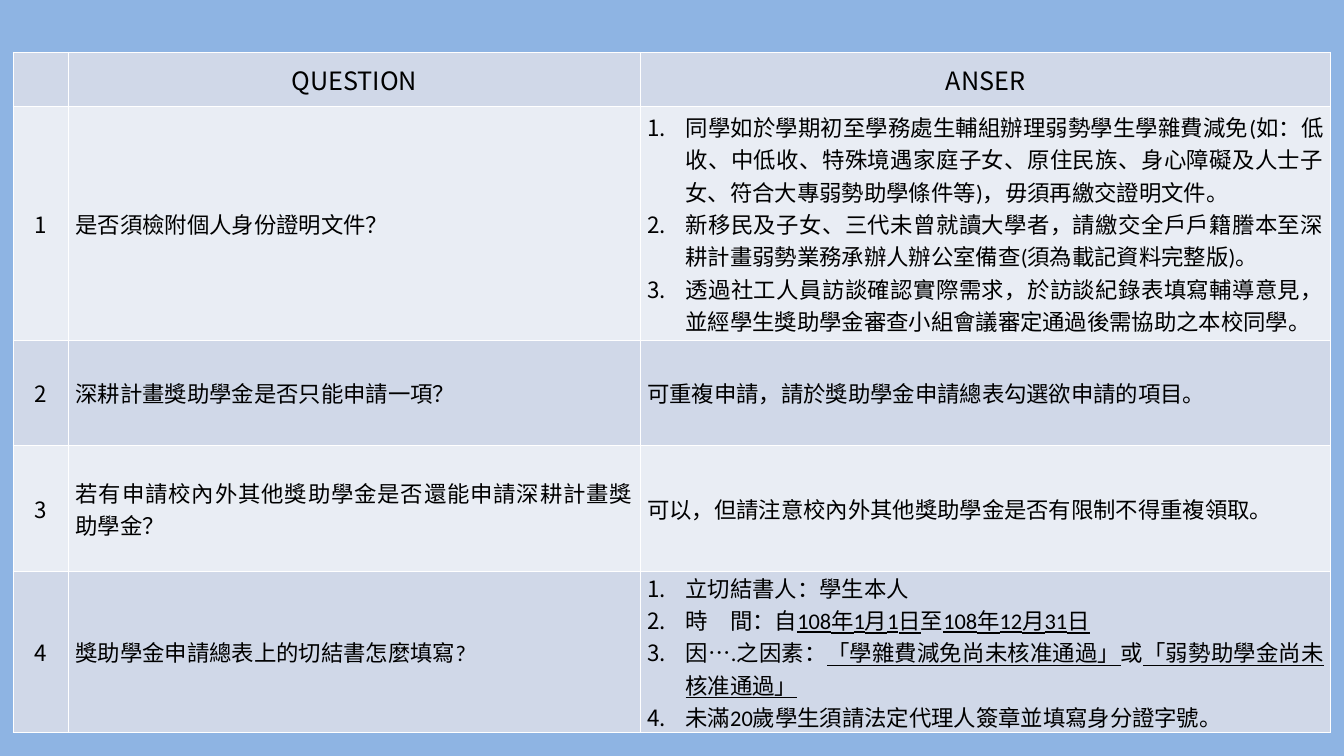
"""Build the question and answer slide on student grants."""
from dataclasses import dataclass

from lxml import etree
from pptx import Presentation
from pptx.dml.color import RGBColor
from pptx.enum.text import MSO_ANCHOR, PP_ALIGN
from pptx.oxml.ns import qn
from pptx.util import Inches, Pt

CENTER, JUSTIFY = PP_ALIGN.CENTER, PP_ALIGN.JUSTIFY
MIDDLE = MSO_ANCHOR.MIDDLE


@dataclass(frozen=True)
class Theme:
    back: str = "8EB4E3"
    dark: str = "D0D8E8"
    light: str = "E9EDF4"
    line: str = "FFFFFF"
    ink: str = "000000"
    sans: str = "Noto Sans CJK SC"
    body: str = "Calibri"
    head: int = 18
    size: int = 16


class Page:
    def __init__(self, slide, theme):
        self.slide = slide
        self.theme = theme
        fill = slide.background.fill
        fill.solid()
        fill.fore_color.rgb = RGBColor.from_string(theme.back)

    def table(self, left, top, cols, rows):
        frame = self.slide.shapes.add_table(
            len(rows), len(cols), Inches(left), Inches(top),
            Inches(sum(cols)), Inches(sum(rows)))
        grid = frame.table
        for col, width in zip(grid.columns, cols):
            col.width = Inches(width)
        for row, height in zip(grid.rows, rows):
            row.height = Inches(height)
        return grid

    def paint(self, cell, color):
        cell.fill.solid()
        cell.fill.fore_color.rgb = RGBColor.from_string(color)
        props = cell._tc.get_or_add_tcPr()
        for spot, side in enumerate(("lnL", "lnR", "lnT", "lnB")):
            edge = etree.Element(qn(f"a:{side}"), w=str(Pt(1)))
            fill = etree.SubElement(edge, qn("a:solidFill"))
            etree.SubElement(fill, qn("a:srgbClr"), val=self.theme.line)
            props.insert(spot, edge)

    def label(self, cell, items, align, face, size, tight=True, listed=False):
        cell.vertical_anchor = MIDDLE
        if tight:
            cell.margin_left = cell.margin_right = Inches(0.07)
            cell.margin_top = cell.margin_bottom = 0
        frame = cell.text_frame
        for spot, item in enumerate(items):
            para = frame.add_paragraph() if spot else frame.paragraphs[0]
            para.alignment = align
            font = para.font
            font.size = Pt(size)
            font.name = face
            font.color.rgb = RGBColor.from_string(self.theme.ink)
            for part, text in enumerate(item.split("_")):
                if text:
                    run = para.add_run()
                    run.text = text
                    if part % 2:
                        run.font.underline = True
            if listed:
                self.number(para)

    def number(self, para):
        props = para._p.get_or_add_pPr()
        props.set("marL", str(Inches(0.38)))
        props.set("indent", str(-Inches(0.38)))
        face = etree.Element(qn("a:buFont"), typeface=self.theme.sans)
        mark = etree.Element(qn("a:buAutoNum"), type="arabicPeriod")
        props.insert(0, face)
        props.insert(1, mark)


HEADS = ("QUESTION", "ANSER")
PAIRS = (
    ("是否須檢附個人身份證明文件？", (
        "同學如於學期初至學務處生輔組辦理弱勢學生學雜費減免(如：低收、中低收、"
        "特殊境遇家庭子女、原住民族、身心障礙及人士子女、符合大專弱勢助學條件等)，"
        "毋須再繳交證明文件。",
        "新移民及子女、三代未曾就讀大學者，請繳交全戶戶籍謄本至深耕計畫弱勢業務"
        "承辦人辦公室備查(須為載記資料完整版)。",
        "透過社工人員訪談確認實際需求，於訪談紀錄表填寫輔導意見，並經學生獎助學金"
        "審查小組會議審定通過後需協助之本校同學。")),
    ("深耕計畫獎助學金是否只能申請一項？",
     ("可重複申請，請於獎助學金申請總表勾選欲申請的項目。",)),
    ("若有申請校內外其他獎助學金是否還能申請深耕計畫獎助學金？",
     ("可以，但請注意校內外其他獎助學金是否有限制不得重複領取。",)),
    ("獎助學金申請總表上的切結書怎麼填寫?", (
        "立切結書人：學生本人",
        "時　間：自_108年1月1日_至_108年12月31日_",
        "因….之因素：_「學雜費減免尚未核准通過」_或_「弱勢助學金尚未核准通過」_",
        "未滿20歲學生須請法定代理人簽章並填寫身分證字號。")),
)


def main():
    deck = Presentation()
    deck.slide_width, deck.slide_height = Inches(13.33), Inches(7.5)
    theme = Theme()
    page = Page(deck.slides.add_slide(deck.slide_layouts[6]), theme)
    grid = page.table(0.13, 0.52, (0.55, 5.67, 6.85),
                      (0.54, 2.32, 1.04, 1.25, 1.46))
    for row in range(len(grid.rows)):
        for col in range(len(grid.columns)):
            page.paint(grid.cell(row, col),
                       theme.light if row % 2 else theme.dark)
    for col, head in enumerate(HEADS, 1):
        page.label(grid.cell(0, col), (head,), CENTER, theme.sans, theme.head)
    for row, (query, reply) in enumerate(PAIRS, 1):
        page.label(grid.cell(row, 0), (str(row),), CENTER, theme.sans,
                   theme.size, tight=False)
        page.label(grid.cell(row, 1), (query,), JUSTIFY, theme.body, theme.size)
        page.label(grid.cell(row, 2), reply, JUSTIFY, theme.body, theme.size,
                   listed=len(reply) > 1)
    deck.save("out.pptx")


if __name__ == "__main__":
    main()
